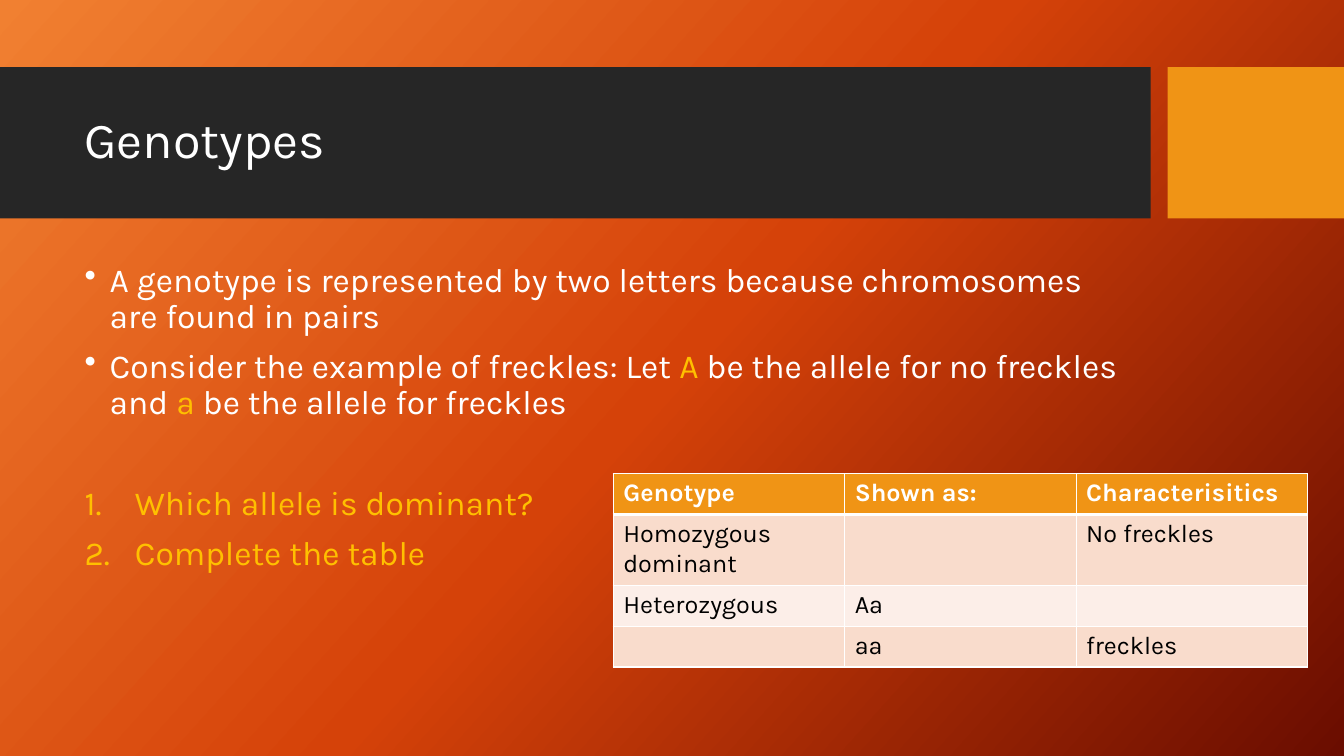
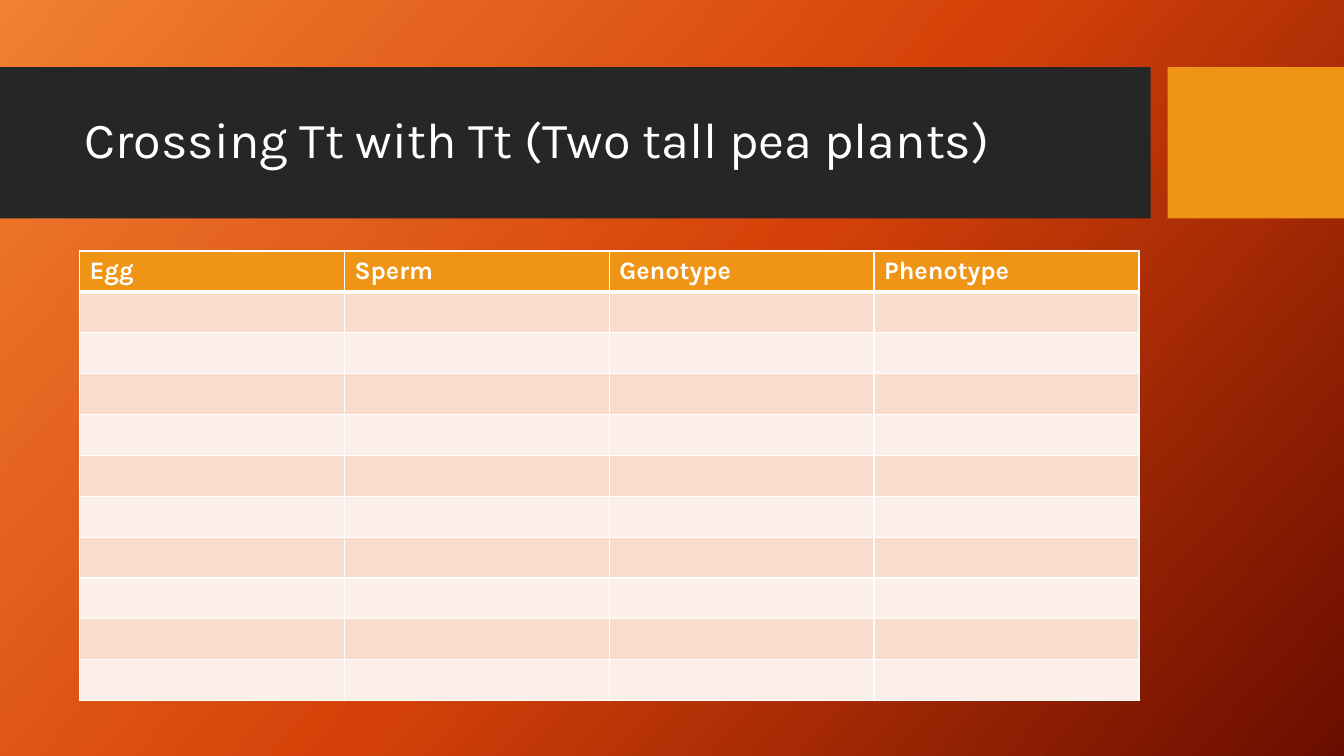
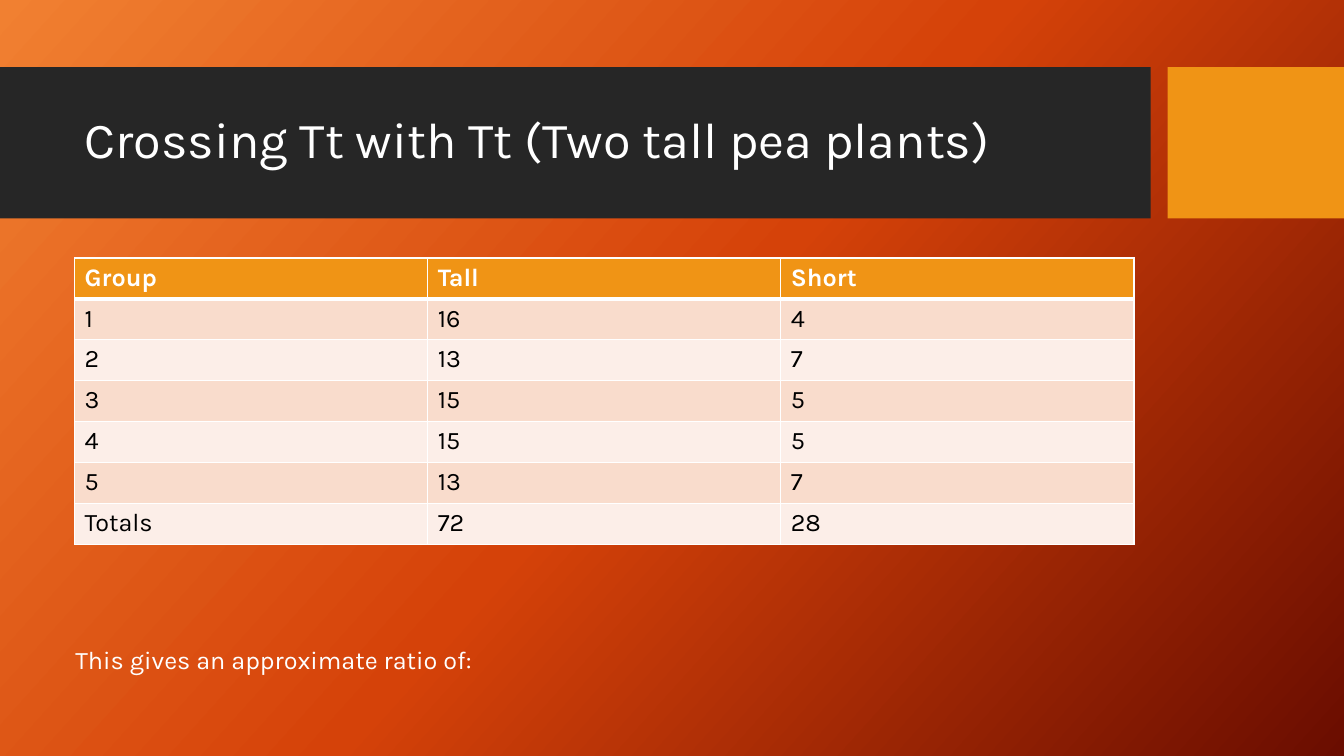
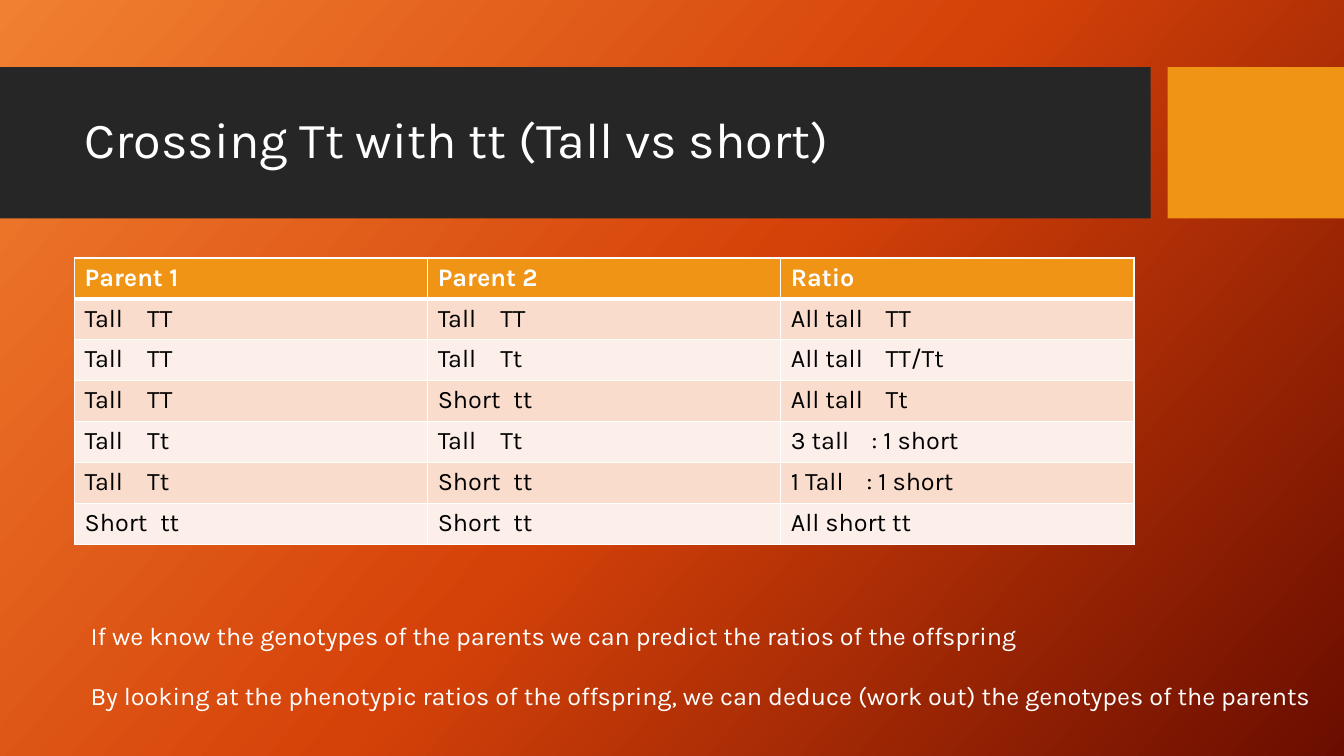
from pptx import Presentation, util as u
from pptx.dml.color import RGBColor
from pptx.enum import shapes, text
from pptx.oxml import parse_xml, ns
from copy import deepcopy

COLORS = {"white": "FFFFFF", "black": "000000", "dark": "262626", "orange": "F09415",
          "yellow": "FFC000", "odd": "F9DCCC", "even": "FCEEE8",
          "glow": "F18031", "ember": "D54209", "deep": "6A0D00"}
COLORS = {name: RGBColor.from_string(value) for name, value in COLORS.items()}
FONT = "Karla"
COLS, ROW = 160, 4.87
MARGIN, WIDTH = 8.88, 126.12

prs = Presentation()
prs.slide_width, prs.slide_height = u.Inches(40 / 3), u.Inches(7.5)
unit = prs.slide_width / COLS


def grid(*lengths):
    return [u.Emu(round(n * unit)) for n in lengths]


def write(tf, content, size=18, color="white", bold=False, before=0, line=1.0,
          bullet=None, indent=0, tab=None):
    p = tf.add_paragraph() if tf.text else tf.paragraphs[0]
    p.line_spacing, p.space_before = line, u.Pt(before)
    pPr = p._p.get_or_add_pPr()
    if bullet:
        pPr.set("marL", str(u.Inches(indent)))
        pPr.set("indent", str(-u.Inches(indent)))
        pPr.append(parse_xml(f'<a:{bullet} {ns.nsdecls("a")}/>'))
    if tab:
        pPr.append(parse_xml(f'<a:tabLst {ns.nsdecls("a")}>'
                             f'<a:tab pos="{u.Inches(tab)}" algn="l"/></a:tabLst>'))
    for i, part in enumerate(content.split("*")):
        r = p.add_run()
        r.text = part
        r.font.name, r.font.size, r.font.bold = FONT, u.Pt(size), bold
        r.font.color.rgb = COLORS["yellow" if i % 2 else color]


fill = prs.slide_master.background.fill
fill.gradient()
fill.gradient_angle = 360 - 42
stops = prs.slide_master.element.find(".//" + ns.qn("a:gsLst"))
stops.insert(1, deepcopy(stops[0]))
for stop, name, position in zip(fill.gradient_stops, ("glow", "ember", "deep"), (0, 0.5, 1)):
    stop.color.rgb, stop.position = COLORS[name], position

dot = dict(size=24, line=0.9, bullet='buChar char="•"', indent=0.25)
number = dict(size=24, line=0.9, bullet='buAutoNum type="arabicPeriod"', indent=0.5, color="yellow")
tabs = {"Tall": 0.62, "Short": 0.75, "All tall": 0.94, "3 tall": 0.8, "1 Tall": 0.75}

pages = [
    dict(title="Genotypes", table=(73, 56.4, 82.68),
         rows=[("Genotype", "Shown as:", "Characterisitics"),
               ("Homozygous dominant", "", "No freckles"),
               ("Heterozygous", "Aa", ""),
               ("", "aa", "freckles")],
         box=(MARGIN, 30.72, WIDTH, 47.28),
         notes=[("A genotype is represented by two letters because chromosomes are found in pairs", dot),
                ("Consider the example of freckles: Let *A* be the allele for no freckles and "
                 "*a *be the allele for freckles", dict(dot, before=10)),
                ("Which allele is dominant?", dict(number, before=46)),
                ("Complete the table", dict(number, before=10))]),
    dict(title="Crossing Tt with Tt (Two tall pea plants)", table=(9.48, 29.88, WIDTH),
         rows=[("Egg", "Sperm", "Genotype", "Phenotype")] + [("",) * 4] * 10),
    dict(title="Crossing Tt with Tt (Two tall pea plants)", table=(MARGIN, 30.72, WIDTH),
         rows=[("Group", "Tall", "Short"),
               ("1", "16", "4"),
               ("2", "13", "7"),
               ("3", "15", "5"),
               ("4", "15", "5"),
               ("5", "13", "7"),
               ("Totals", "72", "28")],
         box=(7.8, 76.08, 50.4, 4.8),
         notes=[("This gives an approximate ratio of:", {})]),
    dict(title="Crossing Tt with tt (Tall vs short)", table=(MARGIN, 30.72, WIDTH),
         rows=[("Parent 1", "Parent 2", "Ratio"),
               ("Tall\tTT", "Tall\tTT", "All tall\tTT"),
               ("Tall\tTT", "Tall\tTt", "All tall\tTT/Tt"),
               ("Tall\tTT", "Short\ttt", "All tall\tTt"),
               ("Tall\tTt", "Tall\tTt", "3 tall\t: 1 short"),
               ("Tall\tTt", "Short\ttt", "1 Tall\t: 1 short"),
               ("Short\ttt", "Short\ttt", "All short tt")],
         box=(9.6, 73.2, 149.52, 12.12),
         notes=[("If we know the genotypes of the parents we can predict the ratios of the offspring", {}),
                ("By looking at the phenotypic ratios of the offspring, we can deduce (work out) "
                 "the genotypes of the parents", dict(before=21.5))]),
]

for page in pages:
    s = prs.slides.add_slide(prs.slide_layouts[6])
    for left, width, name in ((0, 137, "dark"), (139, 21, "orange")):
        sp = s.shapes.add_shape(shapes.MSO_SHAPE.RECTANGLE, *grid(left, 8, width, 18))
        sp.shadow.inherit = False
        sp.fill.solid()
        sp.fill.fore_color.rgb = COLORS[name]
        sp.line.fill.background()

    title = (page["title"], dict(size=36, line=0.9))
    boxes = [((MARGIN, 9.84, WIDTH, 14.16), text.MSO_ANCHOR.MIDDLE, [title])]
    if "box" in page:
        boxes.append((page["box"], text.MSO_ANCHOR.TOP, page["notes"]))
    for place, anchor, paragraphs in boxes:
        tf = s.shapes.add_textbox(*grid(*place)).text_frame
        tf.word_wrap, tf.vertical_anchor = True, anchor
        for content, style in paragraphs:
            write(tf, content, **style)

    rows = page["rows"]
    table = s.shapes.add_table(len(rows), len(rows[0]),
                               *grid(*page["table"], ROW * len(rows))).table
    for i, row in enumerate(rows):
        table.rows[i].height = grid(ROW)[0]
        for j, content in enumerate(row):
            cell = table.cell(i, j)
            cell.fill.solid()
            cell.fill.fore_color.rgb = COLORS["orange" if i == 0 else "odd" if i % 2 else "even"]
            if content:
                write(cell.text_frame, content, color="black" if i else "white", bold=i == 0,
                      tab=tabs[content.split("\t")[0]] if "\t" in content else None)
            weights = {"L": 1, "R": 1, "T": 3 if i == 1 else 1, "B": 3 if i == 0 else 1}
            for k, (side, weight) in enumerate(weights.items()):
                cell._tc.get_or_add_tcPr().insert(k, parse_xml(
                    f'<a:ln{side} {ns.nsdecls("a")} w="{u.Pt(weight)}"><a:solidFill>'
                    f'<a:srgbClr val="{COLORS["white"]}"/></a:solidFill></a:ln{side}>'))

prs.save("out.pptx")
